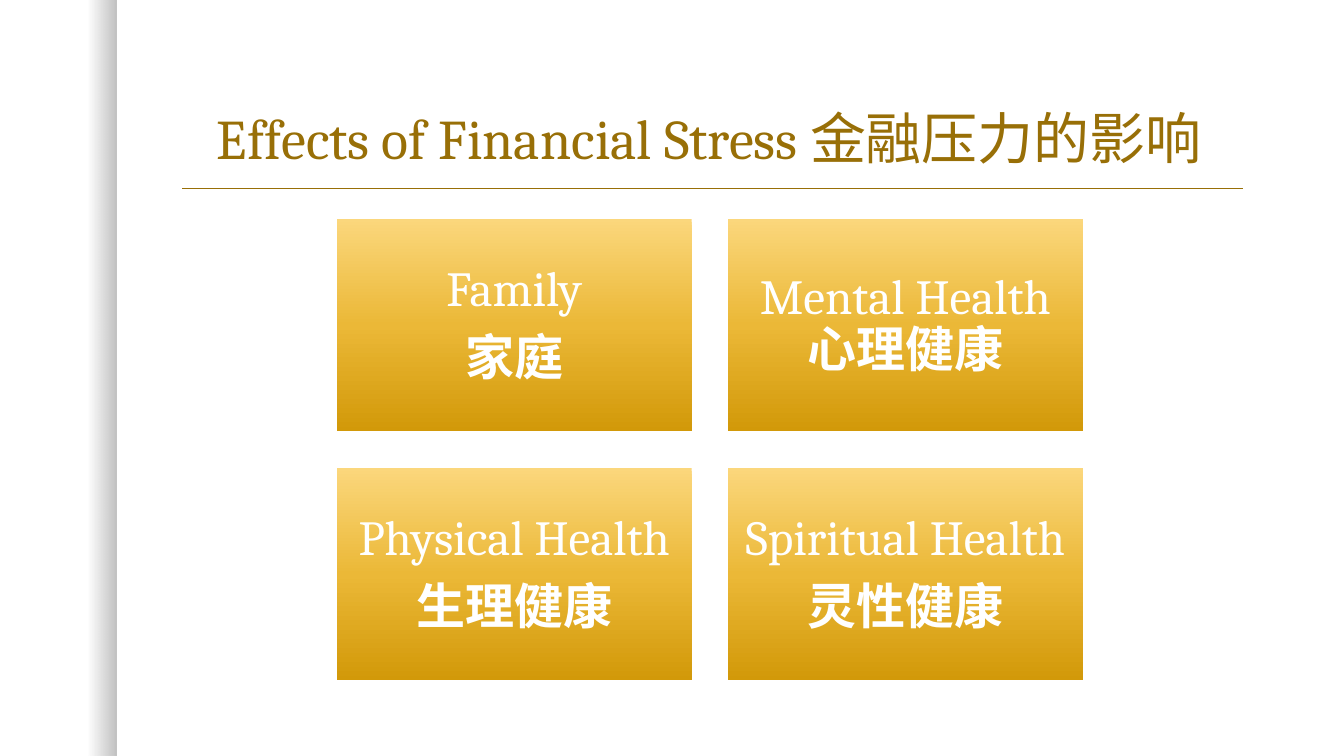
from lxml.etree import SubElement
from pptx import Presentation
from pptx.dml.color import RGBColor
from pptx.enum.shapes import MSO_CONNECTOR, MSO_SHAPE
from pptx.enum.text import MSO_ANCHOR, PP_ALIGN
from pptx.oxml.ns import qn
from pptx.util import Inches, Pt

TITLE = "Effects of Financial Stress 金融压力的影响"
# Each effect is a list of paragraphs; each paragraph is a list of (text, bold) runs.
EFFECTS = [
    [[("Family", False)], [("家庭", True)]],
    [[("Mental Health ", False), ("心理健康", True)]],
    [[("Physical Health", False)], [("生理健康", True)]],
    [[("Spiritual Health", False)], [("灵性健康", True)]],
]

FONT = "Cambria"
BROWN = RGBColor(0x98, 0x6F, 0x07)
WHITE = RGBColor(0xFF, 0xFF, 0xFF)
BLACK = RGBColor(0, 0, 0)
GOLD_LIGHT = RGBColor(0xFB, 0xD7, 0x7C)
GOLD = RGBColor(0xEB, 0xB8, 0x37)
GOLD_DARK = RGBColor(0xD2, 0x99, 0x09)

# Gradient stops: (position %, colour, opacity %)
CARD_STOPS = [(0, GOLD_LIGHT, 100), (50, GOLD, 100), (100, GOLD_DARK, 100)]
EDGE_STOPS = [(75, BLACK, 0), (100, BLACK, 25)]

COLUMNS = 2
CARD_LEFT, CARD_TOP = 3.34, 2.17
CARD_WIDTH, CARD_HEIGHT = 3.52, 2.11
CARD_GAP = 0.36


def write(frame, paragraphs, size, color, anchor, inset=None, space_after=0):
    frame.word_wrap = True
    frame.vertical_anchor = anchor
    if inset is not None:
        frame.margin_left = frame.margin_right = Inches(inset)
        frame.margin_top = frame.margin_bottom = Inches(inset)
    for index, runs in enumerate(paragraphs):
        paragraph = frame.add_paragraph() if index else frame.paragraphs[0]
        paragraph.alignment = PP_ALIGN.CENTER
        paragraph.line_spacing = 0.9
        paragraph.space_before = Pt(0)
        paragraph.space_after = Pt(space_after)
        for text, bold in runs:
            run = paragraph.add_run()
            run.text = text
            run.font.name = FONT
            run.font.size = Pt(size)
            run.font.bold = bold
            run.font.color.rgb = color


def add_gradient_box(slide, left, top, width, height, stops, angle):
    """Add a borderless rectangle; angle is counter-clockwise in degrees."""
    box = slide.shapes.add_shape(
        MSO_SHAPE.RECTANGLE, Inches(left), Inches(top), Inches(width), Inches(height))
    box.shadow.inherit = False
    box.line.fill.background()
    box.fill.gradient()
    box.fill.gradient_angle = angle
    stop_list = box.element.spPr.find(qn("a:gradFill")).find(qn("a:gsLst"))
    for old_stop in list(stop_list):
        stop_list.remove(old_stop)
    for position, color, opacity in stops:
        stop = SubElement(stop_list, qn("a:gs"), pos=str(position * 1000))
        rgb = SubElement(stop, qn("a:srgbClr"), val=str(color))
        if opacity < 100:
            SubElement(rgb, qn("a:alpha"), val=str(opacity * 1000))
    return box


def main():
    deck = Presentation()
    deck.slide_width, deck.slide_height = Inches(13.33), Inches(7.5)
    slide = deck.slides.add_slide(deck.slide_layouts[5])

    add_gradient_box(slide, 0, 0, 1.16, 7.5, EDGE_STOPS, 0)

    rule = slide.shapes.add_connector(
        MSO_CONNECTOR.STRAIGHT, Inches(1.81), Inches(1.87), Inches(12.33), Inches(1.87))
    rule.line.color.rgb = BROWN
    rule.line.width = Pt(1)
    SubElement(rule.element.spPr, qn("a:effectLst"))

    title = slide.shapes.title
    title.left, title.top = Inches(1.66), Inches(0.42)
    title.width, title.height = Inches(10.75), Inches(1.33)
    write(title.text_frame, [[(TITLE, False)]], size=40, color=BROWN,
          anchor=MSO_ANCHOR.BOTTOM)

    for index, effect in enumerate(EFFECTS):
        row, column = divmod(index, COLUMNS)
        card = add_gradient_box(
            slide,
            CARD_LEFT + column * (CARD_WIDTH + CARD_GAP),
            CARD_TOP + row * (CARD_HEIGHT + CARD_GAP),
            CARD_WIDTH, CARD_HEIGHT, CARD_STOPS, 270)
        write(card.text_frame, effect, size=35, color=WHITE,
              anchor=MSO_ANCHOR.MIDDLE, inset=0.15, space_after=12)

    deck.save("out.pptx")


if __name__ == "__main__":
    main()
